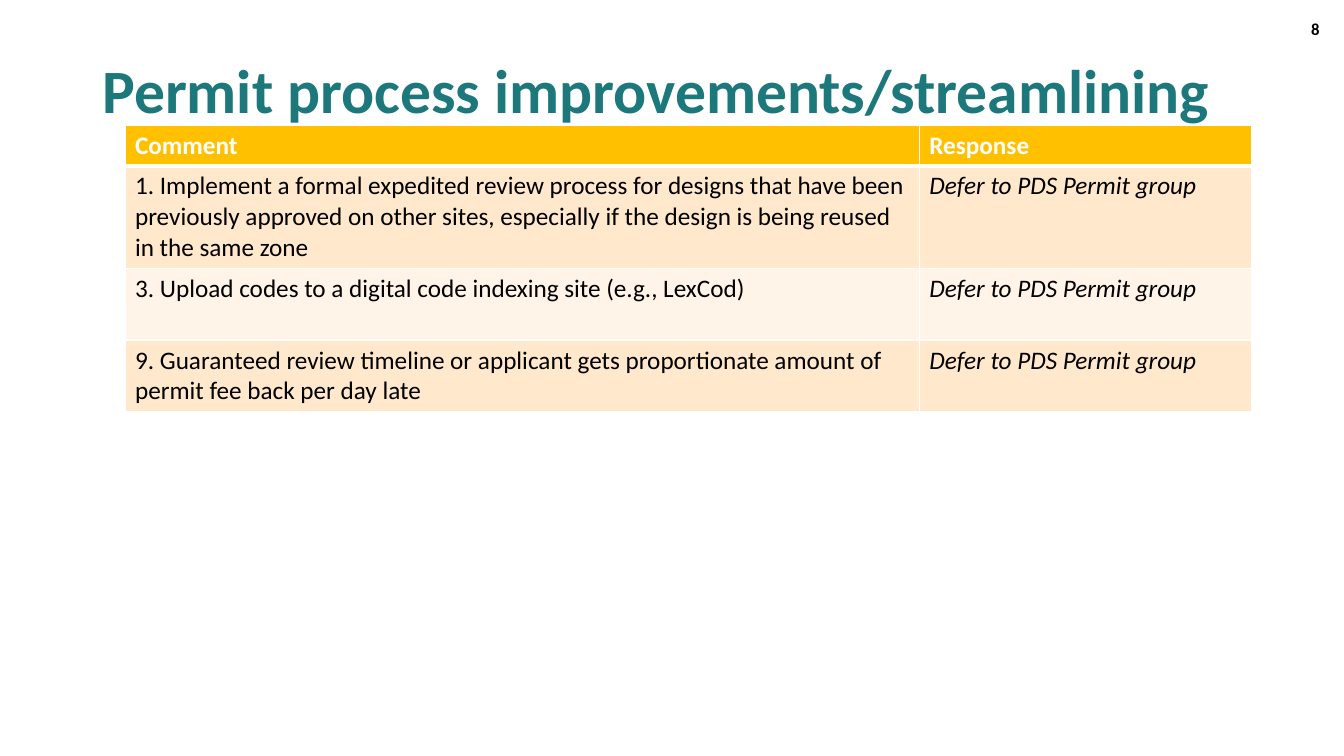
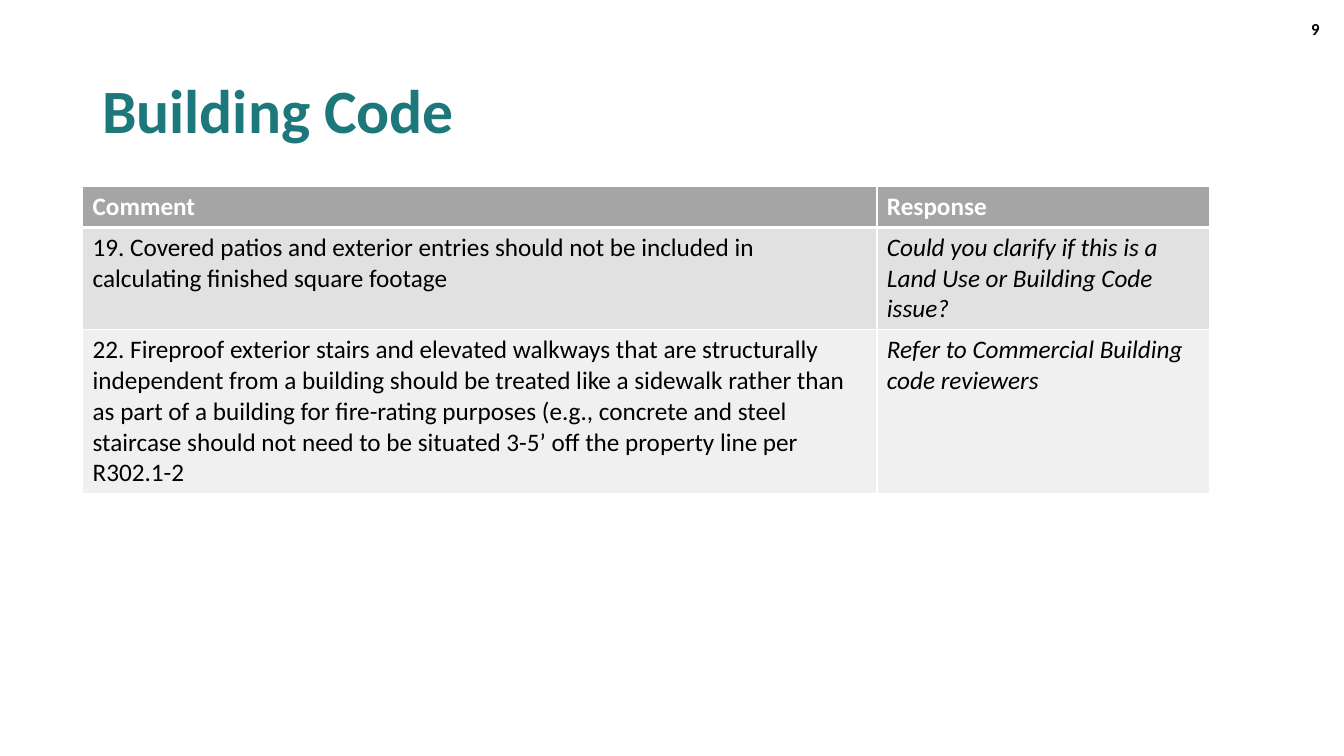
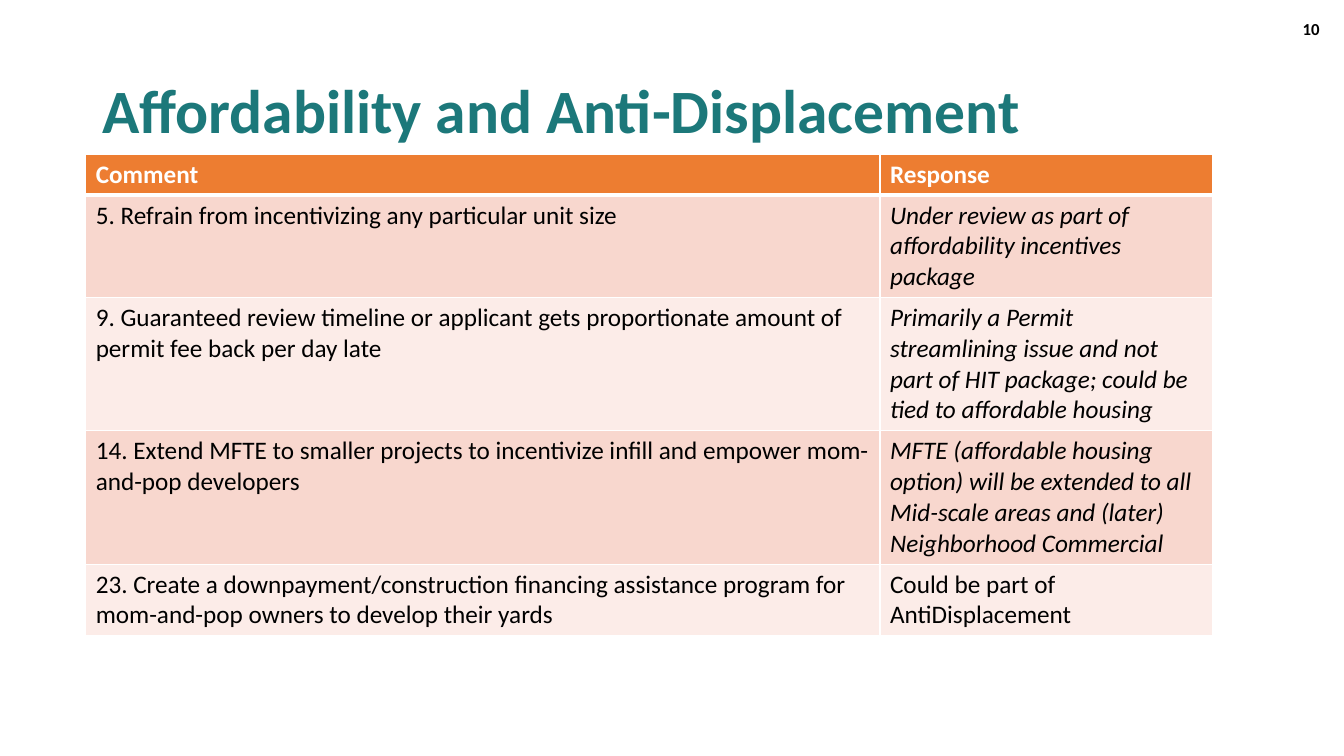
"""Build three slides of public comments and staff responses."""
from lxml.etree import SubElement
from pptx import Presentation
from pptx.dml.color import RGBColor
from pptx.enum.text import MSO_ANCHOR, PP_ALIGN
from pptx.oxml.ns import qn
from pptx.util import Pt

FONT = "Calibri"
COLOR = {"teal": "1C787A", "black": "000000", "white": "FFFFFF"}
TONES = {
    "gold": ("FFC000", "FFE8CC", "FFF4E7"),
    "gray": ("A5A5A5", "E1E1E1", "F0F0F0"),
    "orange": ("ED7D31", "F8D7CE", "FCECE8"),
}
COLS = (567.4, 237.6)
LINE, PAD = 22, 7.2
FIRST = 8
DEFER = "Defer to PDS Permit group"
LATE = ("9. Guaranteed review timeline or applicant gets proportionate "
        "amount of permit fee back per day late")

PAGES = [
    ("Permit process improvements/streamlining", 14.4, (89.3, 89.3), "gold", [
        ("1. Implement a formal expedited review process for designs that "
         "have been previously approved on other sites, especially if the "
         "design is being reused in the same zone", DEFER, 3, True),
        ("3. Upload codes to a digital code indexing site (e.g., LexCod)",
         DEFER, 2, True),
        (LATE, DEFER, 2, True),
    ]),
    ("Building Code", 28.8, (59, 133.2), "gray", [
        ("19. Covered patios and exterior entries should not be included in "
         "calculating finished square footage",
         "Could you clarify if this is a Land Use or Building Code issue?",
         3, True),
        ("22. Fireproof exterior stairs and elevated walkways that are "
         "structurally independent from a building should be treated like a "
         "sidewalk rather than as part of a building for fire-rating "
         "purposes (e.g., concrete and steel staircase should not need to be "
         "situated 3-5’ off the property line per R302.1-2",
         "Refer to Commercial Building code reviewers", 5, True),
    ]),
    ("Affordability and Anti-Displacement", 28.8, (61.2, 110.2), "orange", [
        ("5. Refrain from incentivizing any particular unit size",
         "Under review as part of affordability incentives package", 3, True),
        (LATE, "Primarily a Permit streamlining issue and not part of HIT "
         "package; could be tied to affordable housing", 4, True),
        ("14. Extend MFTE to smaller projects to incentivize infill and "
         "empower mom-and-pop developers",
         "MFTE (affordable housing option) will be extended to all Mid-scale "
         "areas and (later) Neighborhood Commercial", 4, True),
        ("23. Create a downpayment/construction financing assistance program "
         "for mom-and-pop owners to develop their yards",
         "Could be part of AntiDisplacement", 2, False),
    ]),
]


def write(frame, text, size, color, bold=False, italic=False):
    frame.text = text
    para = frame.paragraphs[0]
    font = para.runs[0].font
    font.name, font.size = FONT, Pt(size)
    font.bold, font.italic = bold, italic
    font.color.rgb = RGBColor.from_string(COLOR[color])
    return para


def label(slide, box, text, size, color):
    frame = slide.shapes.add_textbox(*map(Pt, box)).text_frame
    frame.word_wrap = True
    frame.vertical_anchor = MSO_ANCHOR.MIDDLE
    return write(frame, text, size, color, bold=True)


deck = Presentation()
deck.slide_width, deck.slide_height = Pt(960), Pt(540)

for page, (title, top, spot, tone, rows) in enumerate(PAGES, FIRST):
    slide = deck.slides.add_slide(deck.slide_layouts[6])
    label(slide, (66, top, 828, 104.4), title, 44, "teal").line_spacing = 0.9
    number = label(slide, (733.7, 6, 216, 28.8), str(page), 12, "black")
    number.alignment = PP_ALIGN.RIGHT

    lines = [("Comment", "Response", 1, False)] + rows
    high = sum(count * LINE + PAD for _, _, count, _ in lines)
    size = (sum(COLS), high)
    grid = slide.shapes.add_table(
        len(lines), len(COLS), *map(Pt, spot + size)).table
    for col, width in zip(grid.columns, COLS):
        col.width = Pt(width)

    head, *bands = TONES[tone]
    for r, (note, reply, count, slant) in enumerate(lines):
        grid.rows[r].height = Pt(count * LINE + PAD)
        for c, text in enumerate((note, reply)):
            cell = grid.cell(r, c)
            write(cell.text_frame, text, 18, "black" if r else "white",
                  bold=r == 0, italic=slant and c == 1)
            props = cell._tc.get_or_add_tcPr()
            for side in ("lnL", "lnR", "lnT", "lnB"):
                thick = (r, side) in ((0, "lnB"), (1, "lnT"))
                edge = SubElement(props, qn("a:" + side),
                                  w=str(Pt(3 if thick else 1)))
                fill = SubElement(edge, qn("a:solidFill"))
                SubElement(fill, qn("a:srgbClr"), val=COLOR["white"])
            cell.fill.solid()
            shade = bands[(r - 1) % 2] if r else head
            cell.fill.fore_color.rgb = RGBColor.from_string(shade)

deck.save("out.pptx")
